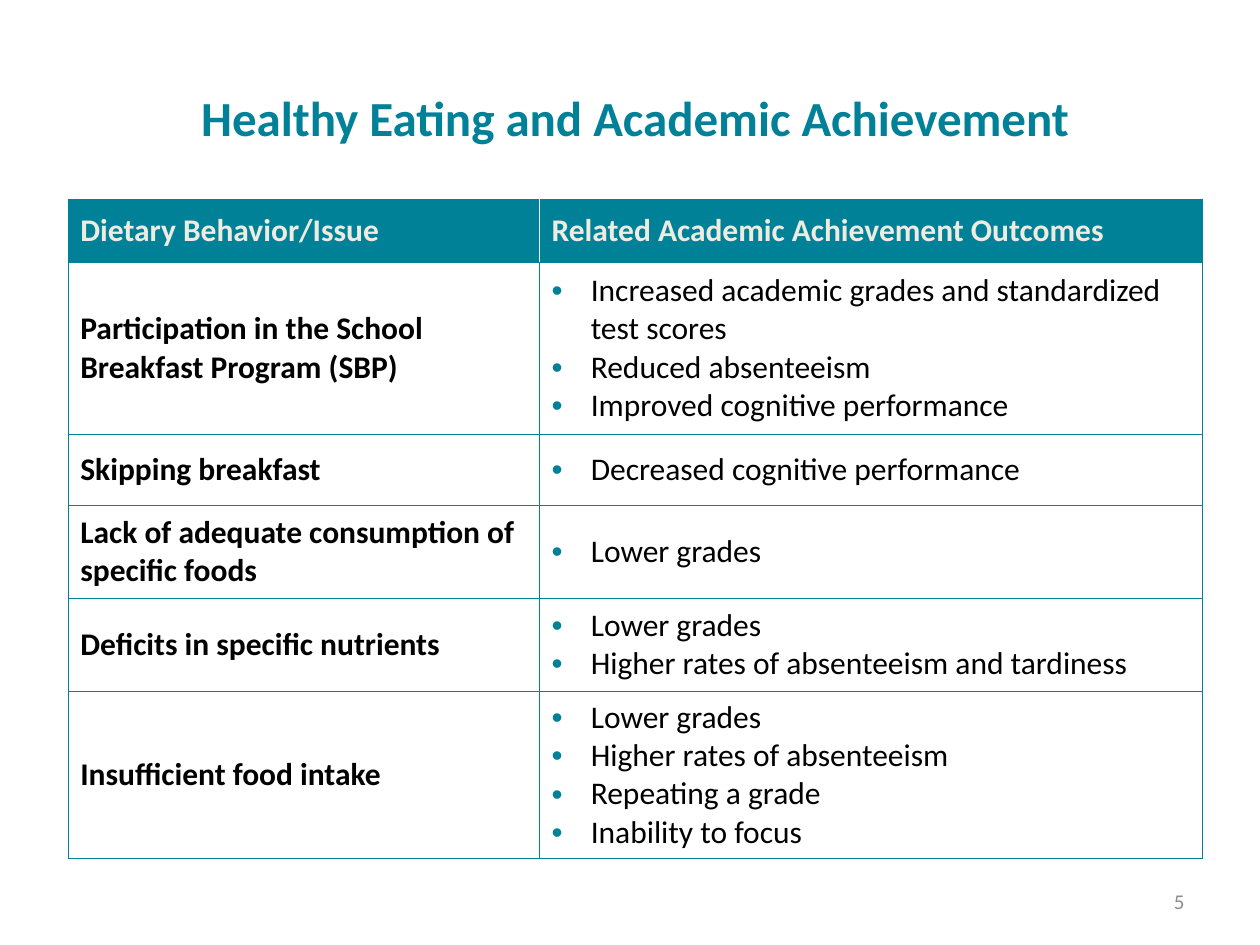
"""Build the slide on healthy eating and academic achievement."""
import lxml.etree
import pptx
import pptx.dml.color
import pptx.enum.text
import pptx.oxml.ns
import pptx.util
from pptx.util import Cm

ANCHOR = pptx.enum.text.MSO_ANCHOR
ALIGN = pptx.enum.text.PP_ALIGN
TEAL, CREAM, WHITE, BLACK, GRAY = "008198", "EEECE1", "FFFFFF", "000000", "8C8C8C"

HEADINGS = ["Dietary Behavior/Issue", "Related Academic Achievement Outcomes"]
OUTCOMES = {
    "Participation in the School Breakfast Program (SBP)": [
        "Increased academic grades and standardized test scores",
        "Reduced absenteeism",
        "Improved cognitive performance",
    ],
    "Skipping breakfast": ["Decreased cognitive performance"],
    "Lack of adequate consumption of specific foods": ["Lower grades"],
    "Deficits in specific nutrients": [
        "Lower grades",
        "Higher rates of absenteeism and tardiness",
    ],
    "Insufficient food intake": [
        "Lower grades",
        "Higher rates of absenteeism",
        "Repeating a grade",
        "Inability to focus",
    ],
}
COLUMN_WIDTHS = [9.5, 13.36]
ROW_HEIGHTS = [1.27, 3.48, 1.42, 1.88, 1.88, 3.33]


def color(value):
    return pptx.dml.color.RGBColor.from_string(value)


def add_xml(parent, tag, **attributes):
    return lxml.etree.SubElement(parent, pptx.oxml.ns.qn(tag), attributes)


class SlideBuilder:
    font_name = "Calibri"

    def __init__(self, slide):
        self.slide = slide

    def set_text(self, frame, lines, size, ink, bold=False, align=ALIGN.LEFT, bullets=False):
        frame.word_wrap = True
        frame.vertical_anchor = ANCHOR.MIDDLE
        for index, line in enumerate(lines):
            paragraph = frame.paragraphs[0] if index == 0 else frame.add_paragraph()
            paragraph.text = line
            paragraph.alignment = align
            if bullets:
                self.bullet(paragraph)
            paragraph.font.name = self.font_name
            paragraph.font.size = pptx.util.Pt(size)
            paragraph.font.bold = bold
            paragraph.font.color.rgb = color(ink)

    def bullet(self, paragraph):
        properties = paragraph._p.get_or_add_pPr()
        properties.set("marL", str(Cm(0.79)))
        properties.set("indent", str(-Cm(0.79)))
        add_xml(add_xml(properties, "a:buClr"), "a:srgbClr", val=TEAL)
        add_xml(properties, "a:buFont", typeface="Arial")
        add_xml(properties, "a:buChar", char="•")

    def title(self, text, left, top, width, height):
        title = self.slide.shapes.title
        title.left, title.top, title.width, title.height = map(Cm, (left, top, width, height))
        self.set_text(title.text_frame, [text], 28, TEAL, bold=True, align=ALIGN.CENTER)

    def cell(self, cell, lines, fill, ink, bold=False, bullets=False, **edges):
        cell.margin_left = cell.margin_right = Cm(0.25)
        cell.margin_top = cell.margin_bottom = Cm(0.13)
        self.set_text(cell.text_frame, lines, 18, ink, bold, bullets=bullets)
        cell.vertical_anchor = ANCHOR.MIDDLE
        properties = cell._tc.get_or_add_tcPr()
        for side in "LRTB":
            border = add_xml(properties, f"a:ln{side}", w=str(pptx.util.Pt(0.5)))
            add_xml(add_xml(border, "a:solidFill"), "a:srgbClr", val=edges.get(side, TEAL))
        cell.fill.solid()
        cell.fill.fore_color.rgb = color(fill)

    def outcome_table(self, left, top):
        table = self.slide.shapes.add_table(
            len(ROW_HEIGHTS), len(COLUMN_WIDTHS), Cm(left), Cm(top),
            Cm(sum(COLUMN_WIDTHS)), Cm(sum(ROW_HEIGHTS)),
        ).table
        for column, width in zip(table.columns, COLUMN_WIDTHS):
            column.width = Cm(width)
        for row, height in zip(table.rows, ROW_HEIGHTS):
            row.height = Cm(height)
        for column, (heading, inner_side) in enumerate(zip(HEADINGS, "RL")):
            self.cell(table.cell(0, column), [heading], TEAL, CREAM, bold=True,
                      **{inner_side: WHITE})
        for row, (issue, outcomes) in enumerate(OUTCOMES.items(), start=1):
            self.cell(table.cell(row, 0), [issue], WHITE, BLACK, bold=True)
            self.cell(table.cell(row, 1), outcomes, WHITE, BLACK, bullets=True)

    def page_number(self, number, left, top, width, height):
        box = self.slide.shapes.add_textbox(*map(Cm, (left, top, width, height)))
        self.set_text(box.text_frame, [number], 12, GRAY, align=ALIGN.RIGHT)


def main():
    deck = pptx.Presentation()
    deck.slide_width, deck.slide_height = Cm(25.4), Cm(19.05)
    title_only = deck.slide_layouts[5]
    builder = SlideBuilder(deck.slides.add_slide(title_only))
    builder.title("Healthy Eating and Academic Achievement", 1.37, 0.76, 22.86, 3.18)
    builder.outcome_table(1.37, 4.01)
    builder.page_number("5", 18.2, 17.65, 5.93, 1.02)
    deck.save("out.pptx")


if __name__ == "__main__":
    main()
